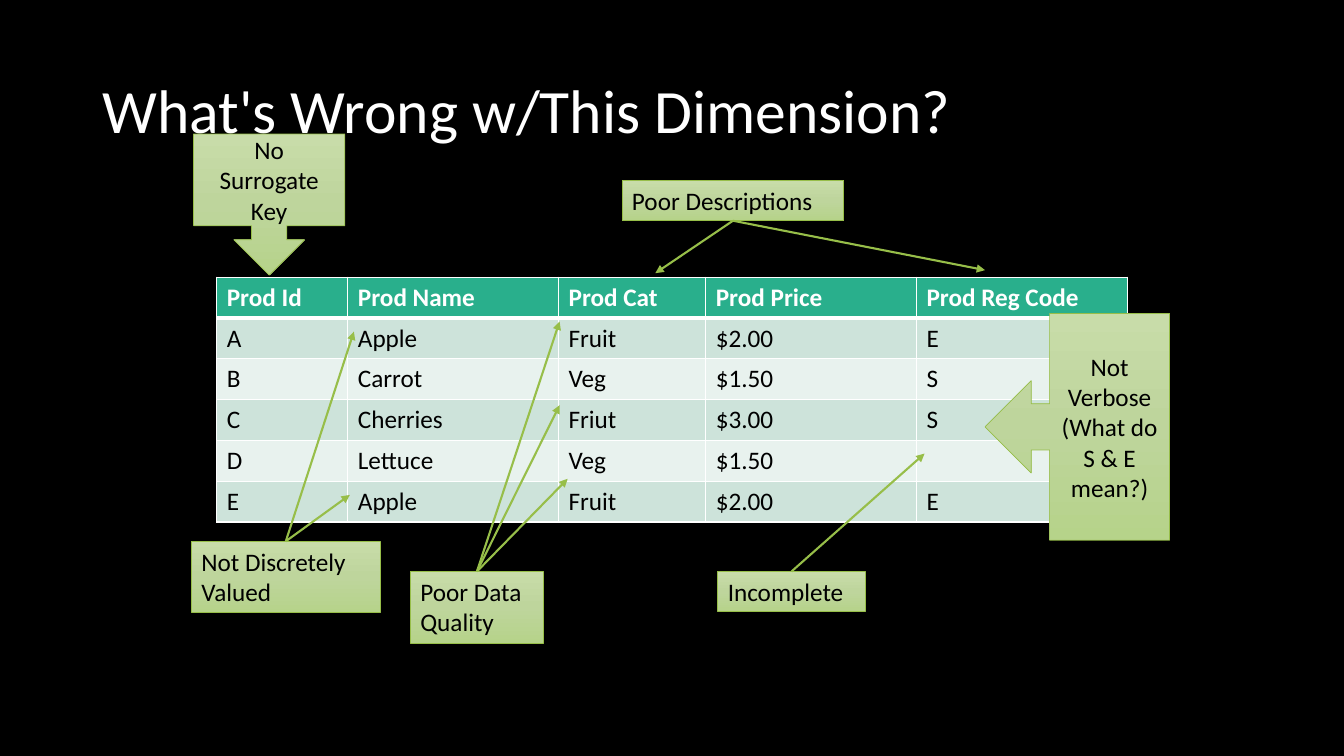
from copy import deepcopy
from dataclasses import dataclass

from lxml.etree import SubElement
from pptx import Presentation
from pptx.dml.color import RGBColor
from pptx.enum.shapes import MSO_CONNECTOR, MSO_SHAPE
from pptx.enum.text import MSO_ANCHOR, PP_ALIGN
from pptx.oxml.ns import qn
from pptx.util import Pt

PX = 9144  # 100 px to the inch
SLIDE_SIZE = (1333, 750)

TITLE = "What's Wrong w/This Dimension?"
TITLE_BOX = (92, 40, 1150, 145)

PRODUCTS = [
    ("Prod Id", "Prod Name", "Prod Cat", "Prod Price", "Prod Reg Code"),
    ("A", "Apple", "Fruit", "$2.00", "E"),
    ("B", "Carrot", "Veg", "$1.50", "S"),
    ("C", "Cherries", "Friut", "$3.00", "S"),
    ("D", "Lettuce", "Veg", "$1.50", ""),
    ("E", "Apple", "Fruit", "$2.00", "E"),
]
COLUMN_WIDTHS = (130, 209, 146, 209, 209)
TABLE_PLACE = (215, 275)
TABLE_HEIGHT = 243

CALLOUTS = [
    ("No Surrogate Key", MSO_SHAPE.DOWN_ARROW_CALLOUT, (192, 133, 150, 140)),
    ("Not Verbose\n(What do S & E mean?)", MSO_SHAPE.LEFT_ARROW_CALLOUT,
     (977, 311, 183, 225)),
]

# text, box, side the arrows leave from, arrow tips
LABELS = [
    ("Incomplete", (712, 567, 146, 40), "top", [(917, 450)]),
    ("Poor Data\nQuality", (407, 567, 132, 71), "top",
     [(563, 475), (555, 402), (555, 319)]),
    ("Not Discretely\nValued", (190, 537, 187, 71), "top",
     [(351, 329), (347, 491)]),
    ("Poor Descriptions", (617, 179, 220, 40), "bottom",
     [(977, 268), (650, 271)]),
]


@dataclass(frozen=True)
class Theme:
    font: str = "Calibri"
    title_size: int = 44
    body_size: int = 18
    background: str = "000000"
    light: str = "FFFFFF"
    dark: str = "000000"
    accent: str = "97BE49"
    gradient: tuple = ((0, "C8DCA9"), (0.5, "BED59C"), (1, "B6D38A"))
    header: str = "29AF8C"
    bands: tuple = ("CDE3DA", "E8F2EE")
    outline: float = 0.5
    arrow: float = 1.5
    cell_line: int = 1
    header_line: int = 3


THEME = Theme()


def emu(*lengths):
    return [round(length * PX) for length in lengths]


def paint(fill, color):
    fill.solid()
    fill.fore_color.rgb = RGBColor.from_string(color)


def write(frame, text, color, size=THEME.body_size, bold=False, align=PP_ALIGN.LEFT):
    para = frame.paragraphs[0]
    para.text = text
    para.alignment = align
    style = {"name": THEME.font, "size": Pt(size), "bold": bold}
    for span in para.runs:
        for name, value in style.items():
            setattr(span.font, name, value)
        span.font.color.rgb = RGBColor.from_string(color)
    return para


def add_title(page):
    frame = page.shapes.add_textbox(*emu(*TITLE_BOX)).text_frame
    frame.word_wrap = True
    frame.vertical_anchor = MSO_ANCHOR.MIDDLE
    write(frame, TITLE, THEME.light, THEME.title_size).line_spacing = 0.9


def add_note(page, kind, box, text, align, anchor):
    """Add a green gradient shape that holds a remark."""
    note = page.shapes.add_shape(kind, *emu(*box))
    note.shadow.inherit = False
    note.fill.gradient()
    stops = next(note._element.iter(qn("a:gsLst")))
    stops.insert(1, deepcopy(stops[0]))
    for stop, (position, color) in zip(note.fill.gradient_stops, THEME.gradient):
        stop.position = position
        stop.color.rgb = RGBColor.from_string(color)
    note.fill.gradient_angle = 270
    paint(note.line.fill, THEME.accent)
    note.line.width = Pt(THEME.outline)
    note.text_frame.word_wrap = True
    note.text_frame.vertical_anchor = anchor
    write(note.text_frame, text, THEME.dark, align=align)


def add_arrow(page, start, tip):
    arrow = page.shapes.add_connector(MSO_CONNECTOR.STRAIGHT, *emu(*start, *tip))
    paint(arrow.line.fill, THEME.accent)
    arrow.line.width = Pt(THEME.arrow)
    SubElement(arrow.line._get_or_add_ln(), qn("a:tailEnd"), type="triangle")
    SubElement(arrow._element.spPr, qn("a:effectLst"))


def add_borders(cell, row):
    widths = {side: THEME.cell_line for side in "LRTB"}
    if row < 2:
        widths["B" if row == 0 else "T"] = THEME.header_line
    properties = cell._tc.get_or_add_tcPr()
    for side, width in widths.items():
        line = SubElement(properties, qn(f"a:ln{side}"), w=str(Pt(width)))
        fill = SubElement(line, qn("a:solidFill"))
        SubElement(fill, qn("a:srgbClr"), val=THEME.light)


def add_products(page):
    size = (sum(COLUMN_WIDTHS), TABLE_HEIGHT)
    table = page.shapes.add_table(
        len(PRODUCTS), len(COLUMN_WIDTHS), *emu(*TABLE_PLACE, *size)).table
    for column, width in zip(table.columns, emu(*COLUMN_WIDTHS)):
        column.width = width
    for row, values in enumerate(PRODUCTS):
        is_header = row == 0
        fill = THEME.header if is_header else THEME.bands[(row - 1) % 2]
        color = THEME.light if is_header else THEME.dark
        for column, value in enumerate(values):
            cell = table.cell(row, column)
            add_borders(cell, row)
            paint(cell.fill, fill)
            write(cell.text_frame, value, color, bold=is_header)


def main():
    deck = Presentation()
    deck.slide_width, deck.slide_height = emu(*SLIDE_SIZE)
    page = deck.slides.add_slide(deck.slide_layouts[6])
    paint(page.background.fill, THEME.background)
    add_title(page)
    add_products(page)
    for text, kind, box in CALLOUTS:
        add_note(page, kind, box, text, PP_ALIGN.CENTER, MSO_ANCHOR.MIDDLE)
    for text, box, side, tips in LABELS:
        left, top, width, height = box
        start = (left + width / 2, top if side == "top" else top + height)
        add_note(page, MSO_SHAPE.RECTANGLE, box, text, PP_ALIGN.LEFT, MSO_ANCHOR.TOP)
        for tip in tips:
            add_arrow(page, start, tip)
    deck.save("out.pptx")


if __name__ == "__main__":
    main()
